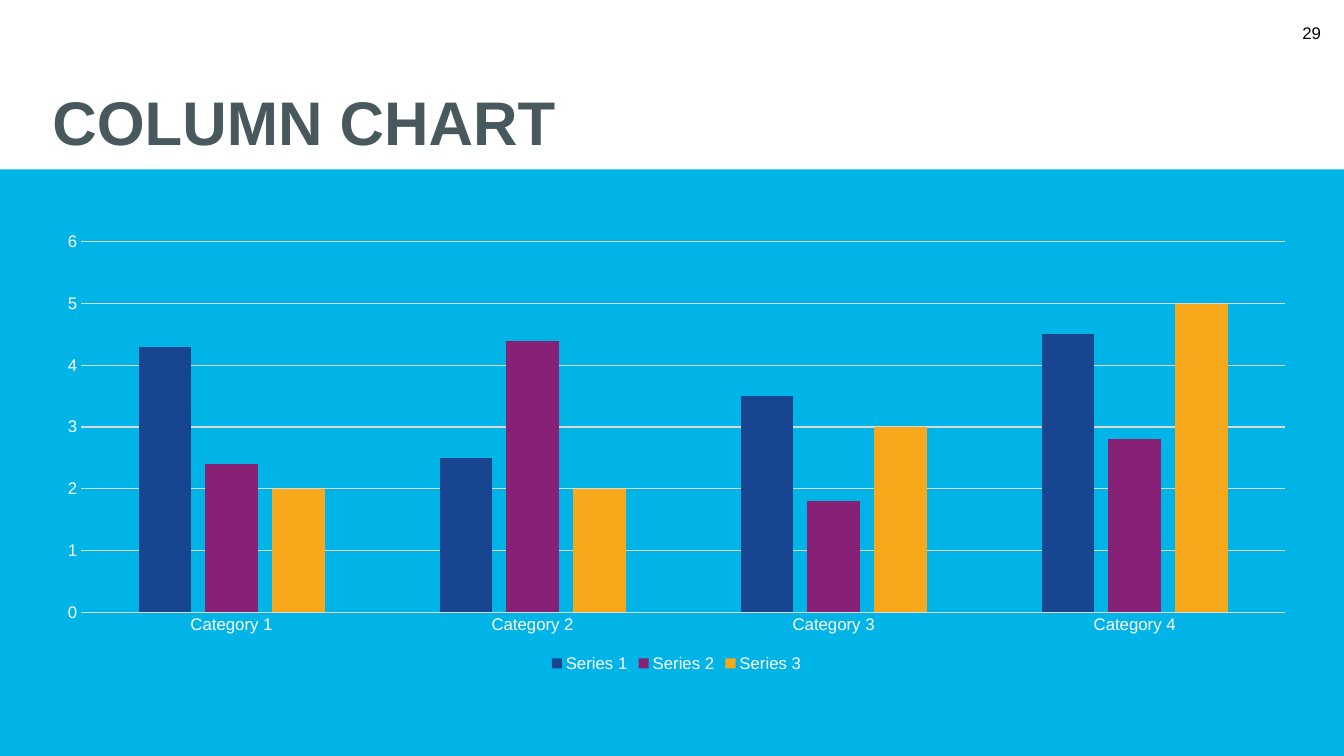
import pptx
import pptx.util
import pptx.chart.data
from pptx.dml.color import RGBColor
from pptx.enum.chart import XL_CHART_TYPE, XL_LEGEND_POSITION, XL_TICK_MARK
from pptx.enum.shapes import MSO_SHAPE
from pptx.enum.text import MSO_ANCHOR, PP_ALIGN

WIDTH, HEIGHT = 13.33, 7.5
HEADER = 1.68
MARGIN = 0.42
CONTENT_WIDTH = 12.58

WHITE = RGBColor(0xFF, 0xFF, 0xFF)
BLACK = RGBColor(0x00, 0x00, 0x00)
SKY = RGBColor(0x01, 0xB4, 0xE7)
SLATE = RGBColor(0x48, 0x59, 0x5D)
GRID_GREY = RGBColor(0xD9, 0xD9, 0xD9)
NAVY = RGBColor(0x17, 0x45, 0x8F)
PLUM = RGBColor(0x87, 0x21, 0x75)
AMBER = RGBColor(0xF7, 0xA8, 0x1B)

CATEGORIES = ["Category 1", "Category 2", "Category 3", "Category 4"]
SERIES = [
    ("Series 1", (4.3, 2.5, 3.5, 4.5), NAVY),
    ("Series 2", (2.4, 4.4, 1.8, 2.8), PLUM),
    ("Series 3", (2, 2, 3, 5), AMBER),
]


def inches(box):
    return [pptx.util.Inches(length) for length in box]


def set_all(target, values):
    for name, value in values.items():
        setattr(target, name, value)


def style_font(font, size, color, bold=False):
    set_all(font, {"name": "Arial", "size": pptx.util.Pt(size), "bold": bold})
    font.color.rgb = color


def style_line(line):
    line.color.rgb = GRID_GREY
    line.width = pptx.util.Pt(0.75)


def add_panel(slide, box):
    panel = slide.shapes.add_shape(MSO_SHAPE.RECTANGLE, *inches(box))
    panel.shadow.inherit = False
    panel.fill.solid()
    panel.fill.fore_color.rgb = SKY
    panel.line.fill.background()


def add_label(slide, box, text, font, frame_format, paragraph_format):
    frame = slide.shapes.add_textbox(*inches(box)).text_frame
    set_all(frame, {"word_wrap": True, **frame_format})
    paragraph = frame.paragraphs[0]
    set_all(paragraph, paragraph_format)
    run = paragraph.add_run()
    run.text = text
    style_font(run.font, **font)


def add_header(slide, box):
    left, top, width, height = box
    # Page number
    add_label(slide, (left + width - 0.26, top + 0.13, 0.46, 0.4), "29",
              {"size": 12, "color": BLACK},
              {"vertical_anchor": MSO_ANCHOR.MIDDLE},
              {"alignment": PP_ALIGN.RIGHT})
    # Title
    add_label(slide, box, "COLUMN CHART",
              {"size": 44, "color": SLATE, "bold": True},
              {"vertical_anchor": MSO_ANCHOR.BOTTOM, "margin_top": 0,
               "margin_bottom": pptx.util.Inches(0.1)},
              {"line_spacing": 0.9})


def add_column_chart(slide, box):
    figures = pptx.chart.data.CategoryChartData()
    figures.categories = CATEGORIES
    for name, values, _ in SERIES:
        figures.add_series(name, values)
    chart = slide.shapes.add_chart(
        XL_CHART_TYPE.COLUMN_CLUSTERED, *inches(box), figures).chart
    chart.has_title = False
    style_font(chart.font, 10, WHITE)

    # Columns
    columns = chart.plots[0]
    set_all(columns, {"gap_width": 219, "overlap": -27,
                      "vary_by_categories": False})
    for series, (_, _, color) in zip(columns.series, SERIES):
        series.format.fill.solid()
        series.format.fill.fore_color.rgb = color

    # Axes and gridlines
    for axis in (chart.category_axis, chart.value_axis):
        set_all(axis, {"major_tick_mark": XL_TICK_MARK.NONE,
                       "minor_tick_mark": XL_TICK_MARK.NONE})
        style_font(axis.tick_labels.font, 12, WHITE)
    style_line(chart.category_axis.format.line)
    set_all(chart.value_axis, {"minimum_scale": 0, "maximum_scale": 6,
                               "major_unit": 1, "has_major_gridlines": True})
    chart.value_axis.format.line.fill.background()
    style_line(chart.value_axis.major_gridlines.format.line)

    # Legend
    chart.has_legend = True
    set_all(chart.legend, {"position": XL_LEGEND_POSITION.BOTTOM,
                           "include_in_layout": False})
    style_font(chart.legend.font, 12, WHITE)


def main():
    deck = pptx.Presentation()
    set_all(deck, {"slide_width": pptx.util.Inches(WIDTH),
                   "slide_height": pptx.util.Inches(HEIGHT)})
    slide = deck.slides.add_slide(deck.slide_layouts[6])
    slide.background.fill.solid()
    slide.background.fill.fore_color.rgb = WHITE
    add_panel(slide, (0, HEADER, WIDTH, HEIGHT - HEADER))
    add_header(slide, (MARGIN, 0, CONTENT_WIDTH, HEADER))
    add_column_chart(slide, (MARGIN, 2.22, CONTENT_WIDTH, 4.49))
    deck.save("out.pptx")


if __name__ == "__main__":
    main()
